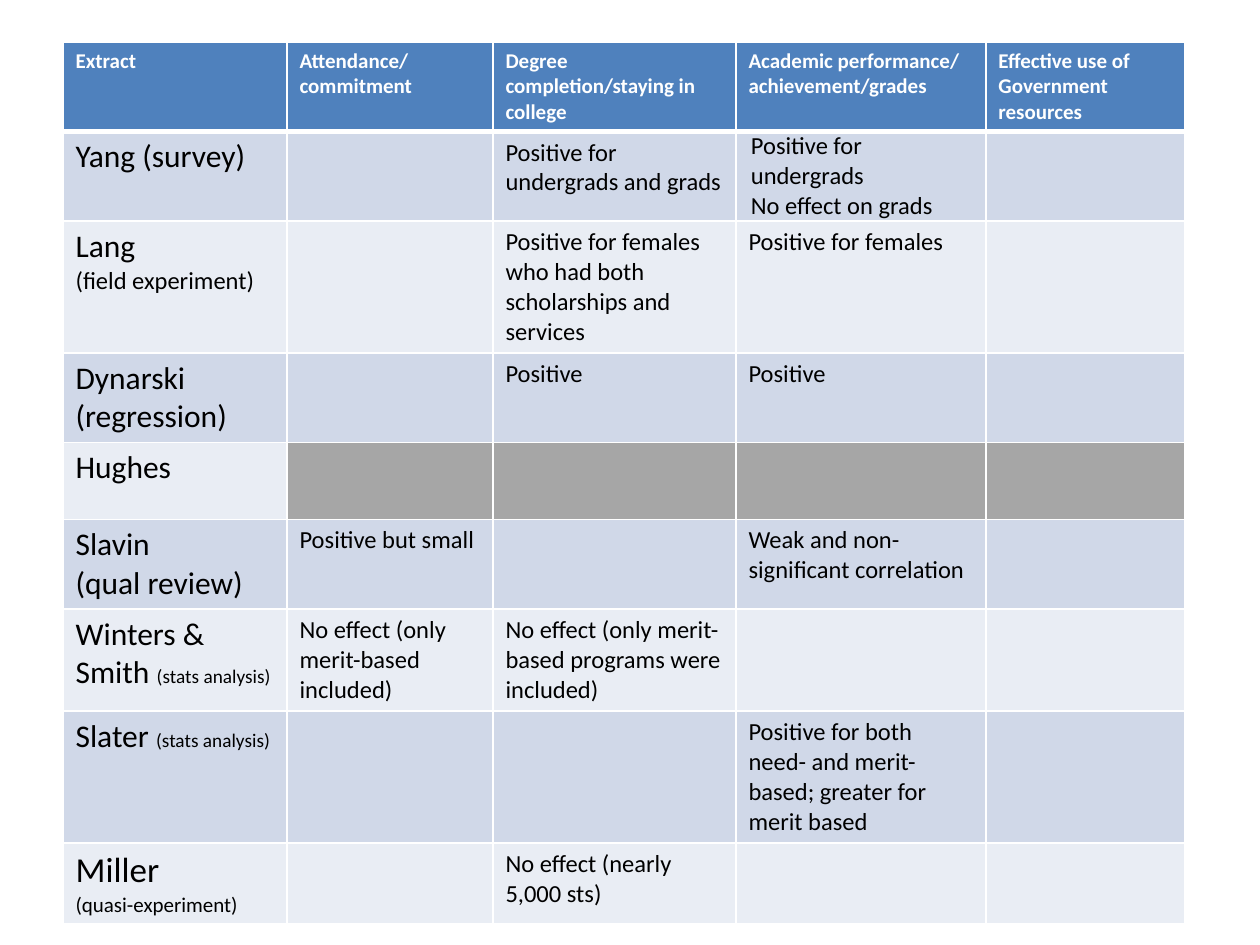
from lxml.etree import SubElement
from pptx import Presentation
from pptx.dml.color import RGBColor
from pptx.oxml.ns import qn
from pptx.util import Pt

PX = 914400 / 126
FONT = "Calibri"
COLORS = {"header": "4F81BD", "odd": "D0D8E8", "even": "E9EDF4",
          "blocked": "A6A6A6", "line": "FFFFFF", "head_text": "FFFFFF", "text": "000000"}

LEFT, TOP, WIDTH, HEIGHT = 63, 42, 1124, 871
COLUMN_WIDTHS = [224, 206, 243, 250, 199]
ROW_HEIGHT = 77
TIGHT_CELL = (1, 3)  # side margins only
TIGHT_SIDE = 15
BLOCKED_ROW = 4

HEADERS = ["Extract", "Attendance/\ncommitment", "Degree completion/staying in college",
           "Academic performance/\nachievement/grades",
           "Effective use of Government resources"]

# Each study: paragraphs of (text, size) spans, then findings by column
STUDIES = [
    ([[("Yang (survey)", 18)]],
     {2: "Positive for undergrads and grads",
      3: "Positive for undergrads\nNo effect on grads"}),
    ([[("Lang", 18)], [("(field experiment)", 14)]],
     {2: "Positive for females who had both scholarships and services",
      3: "Positive for females"}),
    ([[("Dynarski", 18)], [("(regression)", 18)]], {2: "Positive", 3: "Positive"}),
    ([[("Hughes", 18)]], {}),
    ([[("Slavin", 18)], [("(qual review)", 18)]],
     {1: "Positive but small", 3: "Weak and non-significant correlation"}),
    ([[("Winters & Smith ", 18), ("(stats analysis)", 11)]],
     {1: "No effect (only merit-based included)",
      2: "No effect (only merit-based programs were included)"}),
    ([[("Slater ", 18), ("(stats analysis)", 11)]],
     {3: "Positive for both need- and merit-based; greater for merit based"}),
    ([[("Miller", 20)], [("(quasi-experiment)", 12)]],
     {2: "No effect (nearly 5,000 sts)"}),
]


def px(value):
    return round(value * PX)


def plain(text, size):
    """Turn lines of text into paragraphs of one span each."""
    return [[(line, size)] for line in text.split("\n")]


def write(cell, paragraphs, color="text", bold=False):
    frame = cell.text_frame
    for index, spans in enumerate(paragraphs):
        para = frame.add_paragraph() if index else frame.paragraphs[0]
        for text, size in spans:
            span = para.add_run()
            span.text = text
            span.font.name = FONT
            span.font.size = Pt(size)
            span.font.bold = bold
            span.font.color.rgb = RGBColor.from_string(COLORS[color])


def style_cell(cell, row, column):
    """Draw the borders first, since the fill must follow them in the XML."""
    properties = cell._tc.get_or_add_tcPr()
    heavy_side = {0: "B", 1: "T"}.get(row)
    for side in "LRTB":
        width = Pt(3 if side == heavy_side else 1)
        line = SubElement(properties, qn(f"a:ln{side}"), w=str(width))
        fill = SubElement(line, qn("a:solidFill"))
        SubElement(fill, qn("a:srgbClr"), val=COLORS["line"])
    if row == 0:
        shade = "header"
    elif row == BLOCKED_ROW and column:
        shade = "blocked"
    else:
        shade = "odd" if row % 2 else "even"
    cell.fill.solid()
    cell.fill.fore_color.rgb = RGBColor.from_string(COLORS[shade])


def main():
    deck = Presentation()
    deck.slide_width, deck.slide_height = px(1260), px(945)
    page = deck.slides.add_slide(deck.slide_layouts[6])
    table = page.shapes.add_table(len(STUDIES) + 1, len(HEADERS), px(LEFT), px(TOP),
                                  px(WIDTH), px(HEIGHT)).table
    for column, width in zip(table.columns, COLUMN_WIDTHS):
        column.width = px(width)
    for row, line in enumerate(table.rows):
        line.height = px(ROW_HEIGHT)
        for column, cell in enumerate(line.cells):
            style_cell(cell, row, column)

    for column, header in enumerate(HEADERS):
        write(table.cell(0, column), plain(header, 12), color="head_text", bold=True)
    for row, (study, findings) in enumerate(STUDIES, start=1):
        write(table.cell(row, 0), study)
        for column, finding in findings.items():
            write(table.cell(row, column), plain(finding, 14))

    tight = table.cell(*TIGHT_CELL)
    tight.margin_left = tight.margin_right = px(TIGHT_SIDE)
    tight.margin_top = tight.margin_bottom = 0
    deck.save("out.pptx")


if __name__ == "__main__":
    main()
